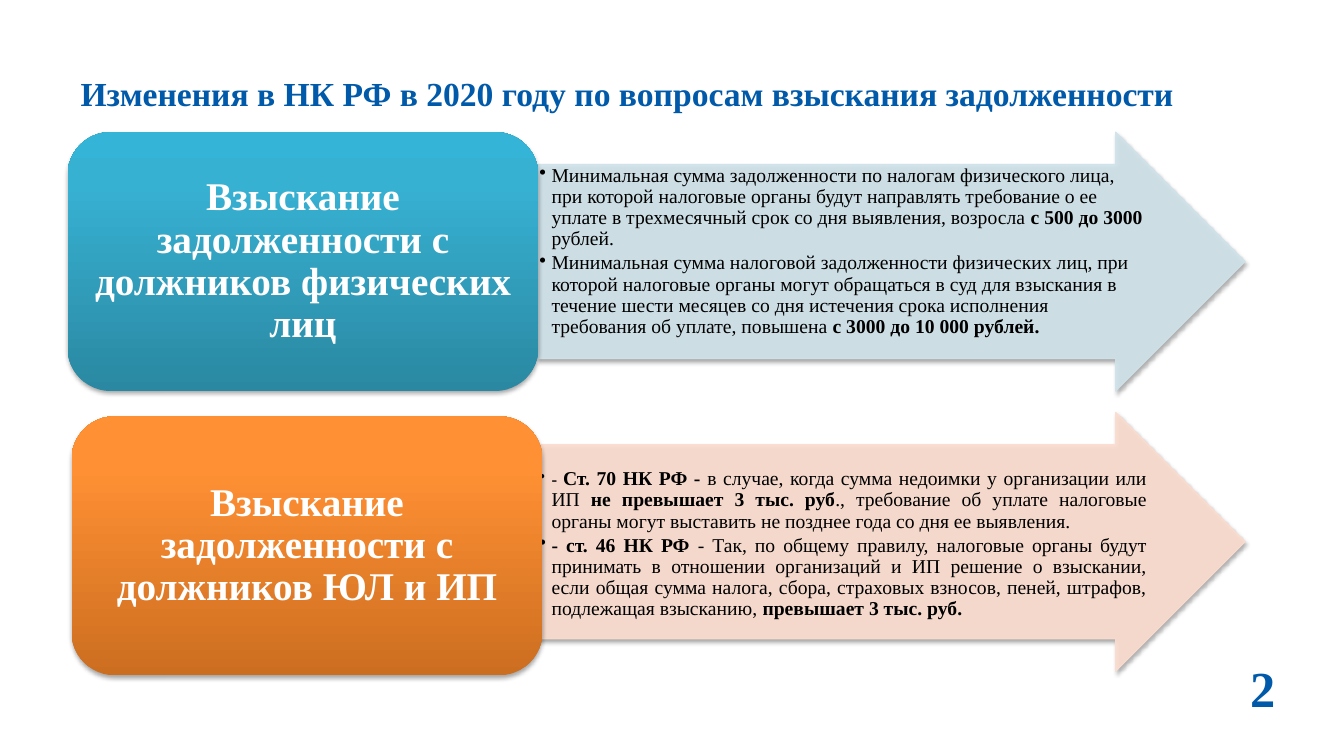
"""Slide on the 2020 tax code changes in debt collection: two categories with arrows."""
from copy import deepcopy

from lxml import etree
from pptx import Presentation
from pptx.dml.color import RGBColor
from pptx.enum.shapes import MSO_SHAPE
from pptx.enum.text import MSO_ANCHOR, PP_ALIGN
from pptx.oxml.ns import qn
from pptx.util import Inches, Pt

ARROW, ROUNDED = MSO_SHAPE.RIGHT_ARROW, MSO_SHAPE.ROUNDED_RECTANGLE
TOP, MIDDLE = MSO_ANCHOR.TOP, MSO_ANCHOR.MIDDLE
LEFT, CENTER, JUSTIFY = PP_ALIGN.LEFT, PP_ALIGN.CENTER, PP_ALIGN.JUSTIFY
COLORS = {
    "heading": "005AA9", "body": "000000", "label": "FFFFFF", "shadow": "000000",
    "person_arrow": "D0E3EA", "company_arrow": "FCDDCF",
    "person_low": "2A88A2", "person_mid": "37B1D2", "person_high": "34B4D6",
    "company_low": "CC6E20", "company_mid": "FF9034", "company_high": "FF9136",
}


def write(paragraph, runs, color):
    """Add (text, size, bold) runs to a paragraph."""
    for text, size, bold in runs:
        run = paragraph.add_run()
        run.text = text
        look = {"name": "Times New Roman", "size": Pt(size), "bold": bold}
        for key, value in look.items():
            setattr(run.font, key, value)
        run.font.color.rgb = RGBColor.from_string(COLORS[color])


def prepare(box, anchor, side, top, bottom, wrap=True):
    """Set the frame format and return the text frame."""
    layout = {
        "word_wrap": wrap, "vertical_anchor": anchor,
        "margin_left": Inches(side), "margin_right": Inches(side),
        "margin_top": Inches(top), "margin_bottom": Inches(bottom),
    }
    for key, value in layout.items():
        setattr(box.text_frame, key, value)
    return box.text_frame


prs = Presentation()
prs.slide_width, prs.slide_height = Inches(13.33), Inches(7.5)
slide = prs.slides.add_slide(prs.slide_layouts[6])
shapes = slide.shapes

heading = shapes.add_textbox(Inches(0.67), Inches(0.3), Inches(12), Inches(1.25))
heading_text = "Изменения в НК РФ в 2020 году по вопросам взыскания задолженности"
write(prepare(heading, MIDDLE, 0.13, 0.06, 0.06).paragraphs[0],
      [(heading_text, 24, True)], "heading")

categories = [
    {
        "key": "person", "arrow_top": 1.31, "label_at": (0.67, 1.31),
        "label": "Взыскание задолженности с должников физических лиц",
        "align": LEFT, "text_top": 0.01,
        "points": [
            [("Минимальная сумма задолженности по налогам физического лица, при которой "
              "налоговые органы будут направлять требование о ее уплате в трехмесячный "
              "срок со дня выявления, возросла ", 14, False),
             ("с 500 до 3000 ", 14, True),
             ("рублей.", 14, False)],
            [("Минимальная сумма налоговой задолженности физических лиц, при которой "
              "налоговые органы могут обращаться в суд для взыскания в течение шести "
              "месяцев со дня истечения срока исполнения требования об уплате, "
              "повышена ", 14, False),
             ("с 3000 до 10 000 рублей.", 14, True)],
        ],
    },
    {
        "key": "company", "arrow_top": 4.09, "label_at": (0.71, 4.13),
        "label": "Взыскание задолженности с должников ЮЛ и ИП",
        "align": JUSTIFY, "text_top": 0.24,
        "points": [
            [("- ", 12, True),
             ("Ст. 70 НК РФ - ", 14, True),
             ("в случае, когда сумма недоимки у организации или ИП ", 14, False),
             ("не превышает 3 тыс. руб", 14, True),
             ("., требование об уплате налоговые органы могут выставить не позднее "
              "года со дня ее выявления.", 14, False)],
            [("- ст. 46 НК РФ ", 14, True),
             ("- Так, по общему правилу, налоговые органы будут принимать в отношении "
              "организаций и ИП решение о взыскании, если общая сумма налога, сбора, "
              "страховых взносов, пеней, штрафов, подлежащая взысканию, ", 14, False),
             ("превышает 3 тыс. руб.", 14, True)],
        ],
    },
]

for category in categories:
    key = category["key"]
    arrow = shapes.add_shape(ARROW, Inches(5.34), Inches(category["arrow_top"]),
                             Inches(7.01), Inches(2.57))
    arrow.adjustments[0], arrow.adjustments[1] = 0.75, 0.5
    arrow_color = RGBColor.from_string(COLORS[key + "_arrow"])
    arrow.fill.solid()
    arrow.fill.fore_color.rgb = arrow_color
    arrow.line.color.rgb = arrow_color
    arrow.line.width = Pt(0.75)
    for tone in arrow.element.spPr.iter(qn("a:srgbClr")):
        etree.SubElement(tone, qn("a:alpha"), val="90000")

    details = prepare(arrow, TOP, 0.01, category["text_top"], 0.01)
    for index, point in enumerate(category["points"]):
        paragraph = details.add_paragraph() if index else details.paragraphs[0]
        properties = paragraph._p.get_or_add_pPr()
        properties.set("marL", str(Inches(0.12)))
        properties.set("indent", str(-Inches(0.12)))
        etree.SubElement(properties, qn("a:buChar"), char="•")
        paragraph.alignment = category["align"]
        paragraph.line_spacing = 0.9
        paragraph.space_after = Pt(2)
        write(paragraph, point, "body")

    left, top = category["label_at"]
    label = shapes.add_shape(ROUNDED, Inches(left), Inches(top), Inches(4.67), Inches(2.57))
    label.line.fill.background()
    label.fill.gradient()
    label.fill.gradient_angle = 90
    stop_list = label.element.spPr.find(".//" + qn("a:gsLst"))
    stop_list.append(deepcopy(stop_list[-1]))
    tones = [("_low", 0), ("_mid", 0.8), ("_high", 1)]
    for stop, (level, position) in zip(label.fill.gradient_stops, tones):
        stop.color.rgb = RGBColor.from_string(COLORS[key + level])
        stop.position = position
    caption = prepare(label, MIDDLE, 0.12, 0.06, 0.06).paragraphs[0]
    caption.alignment = CENTER
    caption.line_spacing = 0.9
    write(caption, [(category["label"], 28, True)], "label")

    for part in (arrow, label):
        part.shadow.inherit = False
        effects = part.element.spPr.find(qn("a:effectLst"))
        shadow = etree.SubElement(effects, qn("a:outerShdw"), blurRad=str(Pt(3.1)),
                                  dist=str(Pt(1.8)), dir="5400000", rotWithShape="0")
        shade = etree.SubElement(shadow, qn("a:srgbClr"), val=COLORS["shadow"])
        etree.SubElement(shade, qn("a:alpha"), val="35000")

page_number = shapes.add_textbox(Inches(12.29), Inches(6.5), Inches(0.57), Inches(0.64))
write(prepare(page_number, MIDDLE, 0.11, 0.06, 0.06, wrap=False).paragraphs[0],
      [("2", 36, True)], "heading")

prs.save("out.pptx")
